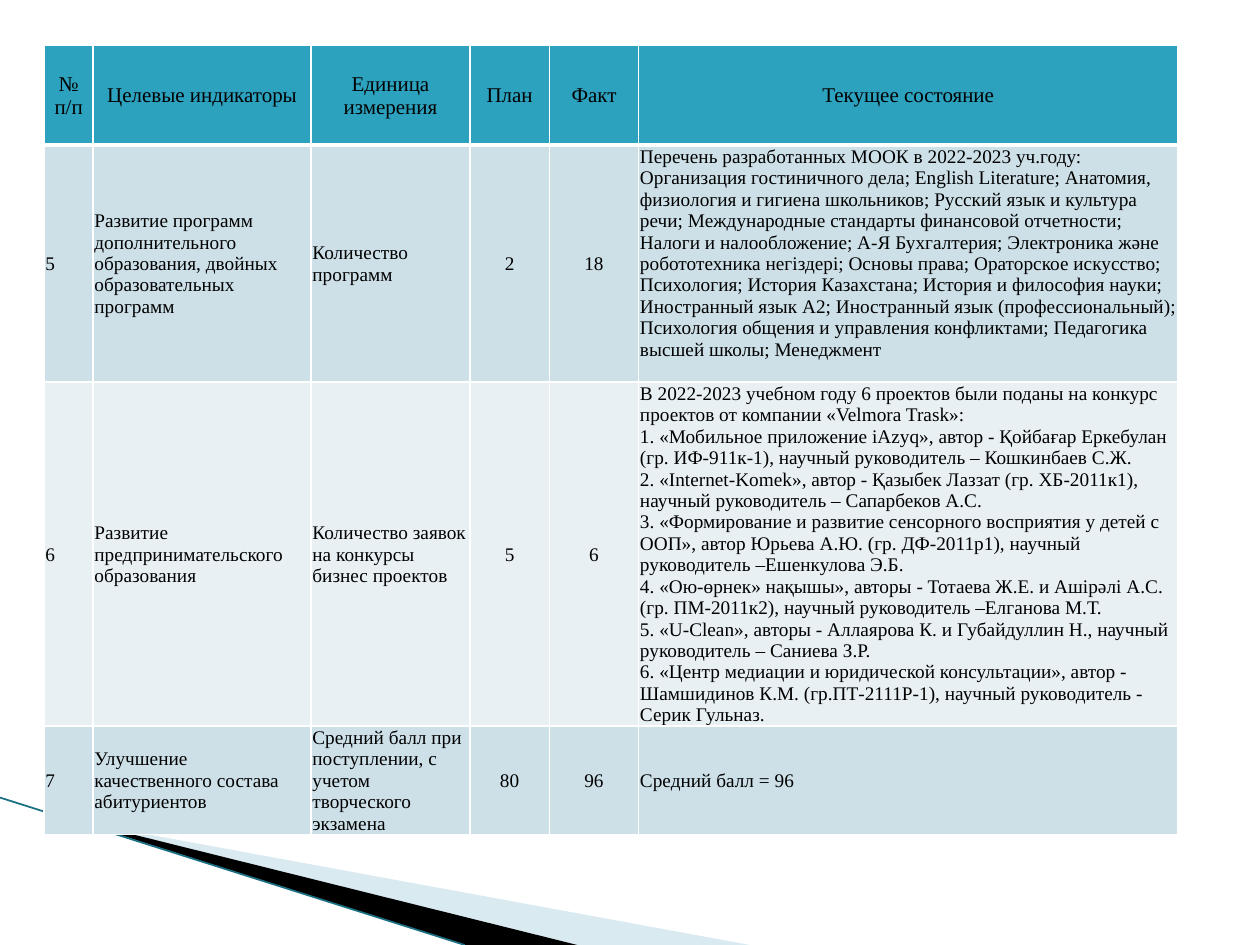
from lxml import etree
from pptx import Presentation
from pptx.dml.color import RGBColor
from pptx.enum.shapes import MSO_CONNECTOR
from pptx.enum.text import MSO_ANCHOR, PP_ALIGN
from pptx.oxml.ns import qn
from pptx.util import Inches, Pt

LINE = MSO_CONNECTOR.STRAIGHT
MIDDLE = MSO_ANCHOR.MIDDLE
LEFT, MID, FULL = PP_ALIGN.LEFT, PP_ALIGN.CENTER, PP_ALIGN.JUSTIFY

WHITE = RGBColor(0xFF, 0xFF, 0xFF)
BLACK = RGBColor(0x00, 0x00, 0x00)
TEAL = RGBColor(0x2D, 0xA2, 0xBF)
DEEP = RGBColor(0x1B, 0x6F, 0x83)
PALE = RGBColor(0xA0, 0xCB, 0xDC)
BANDS = RGBColor(0xE8, 0xF0, 0xF4), RGBColor(0xCD, 0xE0, 0xE8)

FONT = "Times New Roman"
COLS = [0.39, 1.73, 1.26, 0.63, 0.71, 4.28]
ROWS = [0.79, 1.87, 2.73, 0.86]
ALIGN = [FULL, LEFT, LEFT, MID, MID, LEFT]

COURSES = [
    "Перечень разработанных МООК в 2022-2023 уч.году:",
    "Организация гостиничного дела; English Literature; Анатомия, физиология "
    "и гигиена школьников; Русский язык и культура речи; Международные "
    "стандарты финансовой отчетности; Налоги и налообложение; "
    "А-Я Бухгалтерия; Электроника және робототехника негіздері; Основы права; "
    "Ораторское искусство; Психология; История Казахстана; История и "
    "философия науки; Иностранный язык А2; Иностранный язык "
    "(профессиональный); Психология общения и управления конфликтами; "
    "Педагогика высшей школы; Менеджмент",
]
PROJECTS = [
    "В 2022-2023 учебном году 6 проектов были поданы на конкурс проектов от "
    "компании «Velmora Trask»:",
    "1. «Мобильное приложение iAzyq», автор - Қойбағар Еркебулан "
    "(гр. ИФ-911к-1), научный руководитель – Кошкинбаев С.Ж.",
    "2. «Internet-Komek», автор - Қазыбек Лаззат (гр. ХБ-2011к1), научный "
    "руководитель – Сапарбеков А.С.",
    "3. «Формирование и развитие сенсорного восприятия у детей с ООП», автор "
    "Юрьева А.Ю. (гр. ДФ-2011р1), научный руководитель –Ешенкулова Э.Б.",
    "4. «Ою-өрнек» нақышы», авторы - Тотаева Ж.Е. и Ашірәлі А.С. "
    "(гр. ПМ-2011к2), научный руководитель –Елганова М.Т.",
    "5. «U-Clean», авторы - Аллаярова К. и Губайдуллин Н., научный "
    "руководитель – Саниева З.Р.",
    "6. «Центр медиации и юридической консультации», автор - Шамшидинов К.М. "
    "(гр.ПТ-2111Р-1), научный руководитель - Серик Гульназ.",
]
DATA = [
    ["№ п/п", "Целевые индикаторы", "Единица измерения", "План", "Факт",
     "Текущее состояние"],
    ["5", "Развитие программ дополнительного образования, двойных "
     "образовательных программ", "Количество программ", "2", "18",
     "\v".join(COURSES)],
    ["6", "Развитие предпринимательского образования",
     "Количество заявок на конкурсы бизнес проектов", "5", "6",
     "\v".join(PROJECTS)],
    ["7", "Улучшение качественного состава абитуриентов",
     "Средний балл при поступлении, с учетом творческого экзамена", "80", "96",
     "Средний балл = 96"],
]


def add_wedge(slide, spots, color, alpha=None):
    build = slide.shapes.build_freeform(*spots[0])
    build.add_line_segments(spots[1:], close=True)
    wedge = build.convert_to_shape()
    wedge.shadow.inherit = False
    wedge.line.fill.background()
    wedge.fill.solid()
    wedge.fill.fore_color.rgb = color
    if alpha:
        tint = wedge.fill._xPr.find(qn("a:solidFill"))[0]
        etree.SubElement(tint, qn("a:alpha")).set("val", str(alpha * 1000))


def add_decor(slide, left, top, width, height):
    """Wedges and a thin line that run down to the slide's lower edge."""
    def spot(x, y):
        return int(left + x * width), int(top + y * height)

    pale = [spot(0.09, 0.15), spot(1, 1), spot(0.77, 1)]
    dark = [spot(0.09, 0.14), spot(0.77, 1), spot(0.62, 1)]
    add_wedge(slide, pale, PALE, 40)
    add_wedge(slide, dark, BLACK)
    edge = slide.shapes.add_connector(LINE, *spot(0, 0), *spot(0.62, 1))
    edge.line.color.rgb = DEEP
    edge.line.width = Pt(1)
    etree.SubElement(edge._element.spPr, qn("a:effectLst"))


def set_edges(cell, top, low):
    """White borders; top and low are line widths in points."""
    props = cell._tc.get_or_add_tcPr()
    for side, size in zip("LRTB", (1, 1, top, low)):
        edge = etree.SubElement(props, qn("a:ln" + side), w=str(Pt(size)))
        fill = etree.SubElement(edge, qn("a:solidFill"))
        etree.SubElement(fill, qn("a:srgbClr"), val=str(WHITE))


def fill_cell(cell, text, row, col):
    head = row == 0
    set_edges(cell, 3 if row == 1 else 1, 3 if head else 1)
    cell.fill.solid()
    cell.fill.fore_color.rgb = TEAL if head else BANDS[row % 2]
    cell.vertical_anchor = MIDDLE
    cell.margin_left = cell.margin_right = cell.margin_top = Inches(0.01)
    # The course list sits at the top of its cell
    cell.margin_bottom = Inches(0.17) if (row, col) == (1, 5) else 0
    para = cell.text_frame.paragraphs[0]
    para.text = text
    para.alignment = MID if head else ALIGN[col]
    for run in para.runs:
        run.font.name = FONT
        run.font.size = Pt(12 if head else 11)
        run.font.bold = False
        run.font.color.rgb = BLACK


def add_grid(slide, left, top, width, height):
    """Table of target indicators."""
    frame = slide.shapes.add_table(
        len(ROWS), len(COLS), left, top, width, height)
    table = frame.table
    for col, share in zip(table.columns, COLS):
        col.width = int(width * share / sum(COLS))
    for row, share in zip(table.rows, ROWS):
        row.height = int(height * share / sum(ROWS))
    for r, texts in enumerate(DATA):
        for c, text in enumerate(texts):
            fill_cell(table.cell(r, c), text, r, c)


def main():
    deck = Presentation()
    deck.slide_width, deck.slide_height = Inches(10), Inches(7.5)
    slide = deck.slides.add_slide(deck.slide_layouts[6])
    add_decor(slide, 0, Inches(6.33), Inches(5.95), Inches(1.17))
    add_grid(slide, Inches(0.35), Inches(0.36), Inches(9), Inches(6.25))
    deck.save("out.pptx")


if __name__ == "__main__":
    main()
